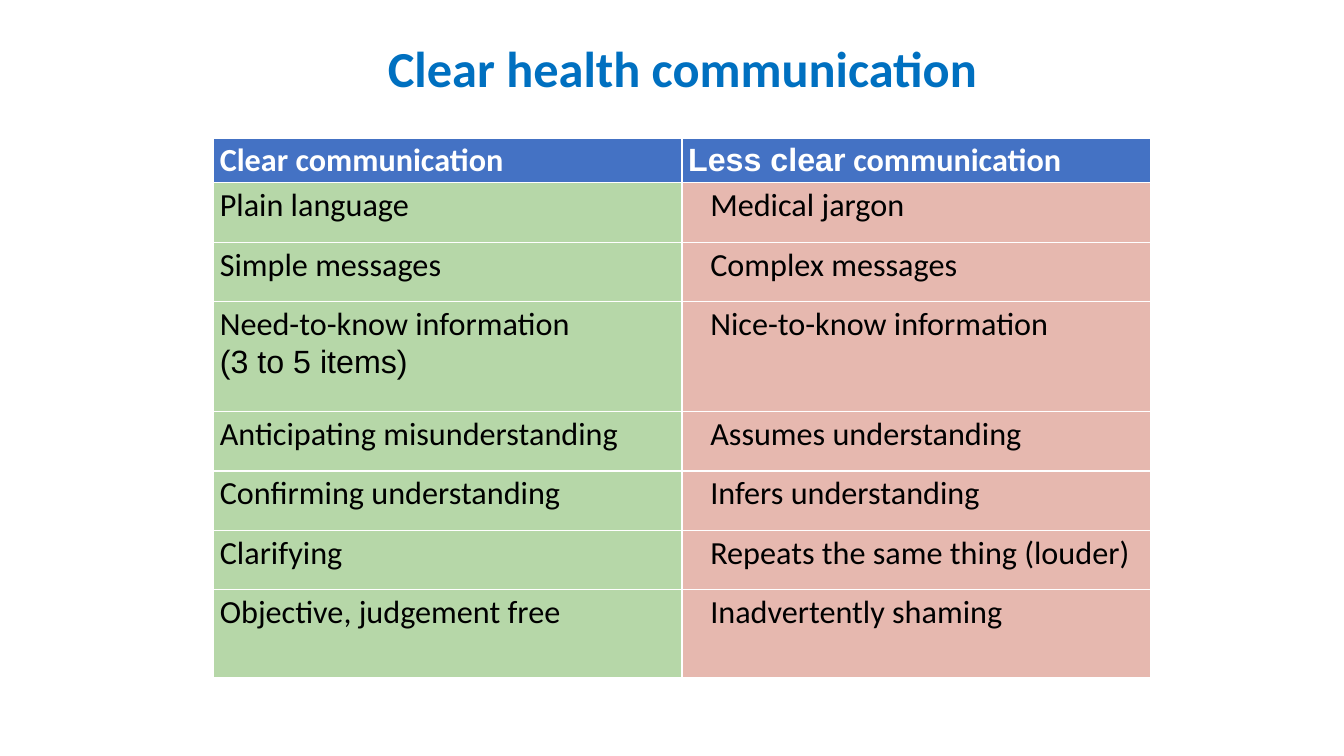
from pptx import Presentation, util as u
from pptx.dml.color import RGBColor
from pptx.enum import text

WHITE, BLACK, BLUE = "FFFFFF", "000000", "0070C0"
HEADER_FILL = "4472C4"
COLUMN_FILLS = ["B6D7A8", "E6B8AF"]
ROW = 0.59
ROW_HEIGHTS = [0.44, ROW, ROW, 1.09, ROW, ROW, ROW, 0.87]
COLUMN_WIDTH = 4.645
MARGIN, INDENT = 0.06, 0.22

# Each cell is a list of paragraphs, each paragraph a list of (words, font).
ROWS = [
    ([[("Clear communication", "Calibri")]],
     [[("Less clear", "Arial"), (" communication", "Calibri")]]),
    ([[("Plain language", "Calibri")]], [[("Medical jargon", "Calibri")]]),
    ([[("Simple messages", "Calibri")]], [[("Complex messages", "Calibri")]]),
    ([[("Need-to-know information", "Calibri")], [("(3 to 5 items)", "Arial")]],
     [[("Nice-to-know information", "Calibri")]]),
    ([[("Anticipating misunderstanding", "Calibri")]],
     [[("Assumes understanding", "Calibri")]]),
    ([[("Confirming understanding", "Calibri")]],
     [[("Infers understanding", "Calibri")]]),
    ([[("Clarifying", "Calibri")]],
     [[("Repeats the same thing (louder)", "Calibri")]]),
    ([[("Objective, judgement free", "Calibri")]],
     [[("Inadvertently shaming", "Calibri")]]),
]


def set_format(target, color, values):
    """Colour a font or fill and set its other attributes."""
    color_format = target.color if hasattr(target, "color") else target.fore_color
    color_format.rgb = RGBColor.from_string(color)
    for name, value in values.items():
        setattr(target, name, value)


def add_runs(paragraph, runs, color, size, bold):
    for words, font_name in runs:
        run = paragraph.add_run()
        run.text = words
        set_format(run.font, color,
                   {"name": font_name, "size": u.Pt(size), "bold": bold})


presentation = Presentation()
presentation.slide_width = u.Inches(13.33)
presentation.slide_height = u.Inches(7.5)
slide = presentation.slides.add_slide(presentation.slide_layouts[6])

title = slide.shapes.add_textbox(
    u.Inches(2.21), u.Inches(0.29), u.Inches(9.12), u.Inches(0.84))
title.text_frame.word_wrap = True
title.text_frame.vertical_anchor = text.MSO_ANCHOR.MIDDLE
heading = title.text_frame.paragraphs[0]
heading.alignment = text.PP_ALIGN.CENTER
heading.line_spacing = 0.9
add_runs(heading, [("Clear health communication", "Calibri")], BLUE, 36, True)

table = slide.shapes.add_table(
    len(ROWS), 2, u.Inches(2.12), u.Inches(1.37),
    u.Inches(2 * COLUMN_WIDTH), u.Inches(sum(ROW_HEIGHTS))).table

for row_index, (height, row) in enumerate(zip(ROW_HEIGHTS, ROWS)):
    table.rows[row_index].height = u.Inches(height)
    is_header = row_index == 0
    for column_index, paragraphs in enumerate(row):
        cell = table.cell(row_index, column_index)
        indent = 0 if is_header else INDENT * column_index
        margins = {"margin_left": MARGIN + indent, "margin_right": MARGIN,
                   "margin_top": MARGIN / 2, "margin_bottom": MARGIN / 2}
        for name, value in margins.items():
            setattr(cell, name, u.Inches(value))
        cell.fill.solid()
        set_format(cell.fill,
                   HEADER_FILL if is_header else COLUMN_FILLS[column_index], {})
        for index, runs in enumerate(paragraphs):
            frame = cell.text_frame
            paragraph = frame.add_paragraph() if index else frame.paragraphs[0]
            add_runs(paragraph, runs, WHITE if is_header else BLACK, 23, is_header)

presentation.save("out.pptx")
